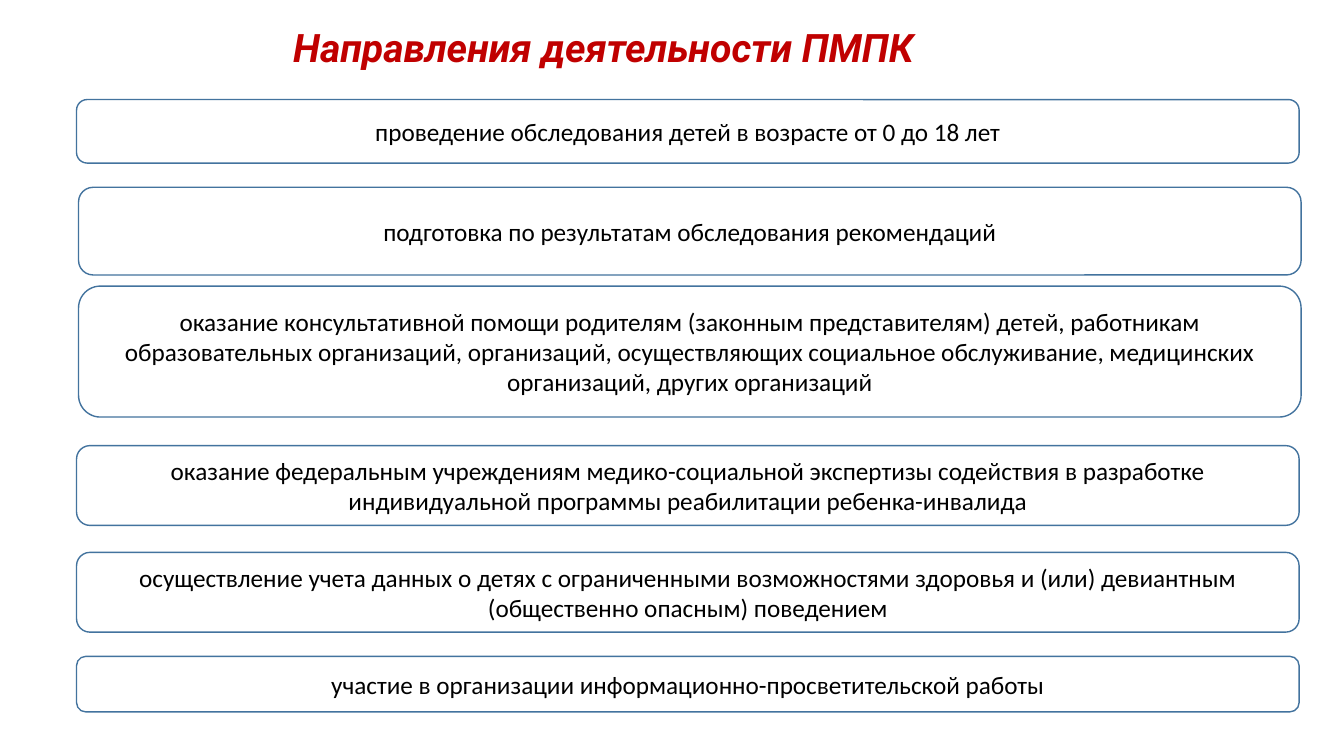
from pptx import Presentation
from pptx.dml.color import RGBColor
from pptx.enum.shapes import MSO_SHAPE
from pptx.enum.text import MSO_ANCHOR, PP_ALIGN
from pptx.util import Cm, Pt

ROUND = MSO_SHAPE.ROUNDED_RECTANGLE
MIDDLE = MSO_ANCHOR.MIDDLE
LEFT, CENTER = PP_ALIGN.LEFT, PP_ALIGN.CENTER

COLORS = {"title": "C00000", "text": "000000", "fill": "FFFFFF", "line": "43739E"}

TITLE = "Направления деятельности ПМПК"
SHIFT = 0.05
TASKS = [
    (0, 0, 1.6, "проведение обследования детей в возрасте от 0 до 18 лет"),
    (SHIFT, 2.21, 2.21, "подготовка по результатам обследования рекомендаций"),
    (SHIFT, 4.7, 3.3,
     "оказание консультативной помощи родителям (законным представителям) детей, "
     "работникам образовательных организаций, организаций, осуществляющих социальное "
     "обслуживание, медицинских организаций, других организаций"),
    (0, 8.72, 2.01,
     "оказание федеральным учреждениям медико-социальной экспертизы содействия "
     "в разработке индивидуальной программы реабилитации ребенка-инвалида"),
    (0, 11.41, 2.01,
     "осуществление учета данных о детях с ограниченными возможностями здоровья "
     "и (или) девиантным (общественно опасным) поведением"),
    (0, 14.03, 1.4, "участие в организации информационно-просветительской работы"),
]


def color(name):
    return RGBColor.from_string(COLORS[name])


def write(shape, text, face, size, tint, align):
    frame = shape.text_frame
    frame.word_wrap = True
    frame.vertical_anchor = MIDDLE
    para = frame.paragraphs[0]
    para.text = text
    para.alignment = align
    para.font.name = face
    para.font.size = Pt(size)
    para.font.color.rgb = color(tint)
    return para


def add_title(slide, left, top, width, height):
    box = slide.shapes.add_textbox(Cm(left), Cm(top), Cm(width), Cm(height))
    para = write(box, TITLE, "Roboto", 28, "title", LEFT)
    para.line_spacing = 0.9
    para.font.bold = True
    para.font.italic = True


def add_tasks(slide, left, top, width):
    for shift, drop, height, text in TASKS:
        card = slide.shapes.add_shape(
            ROUND, Cm(left + shift), Cm(top + drop), Cm(width), Cm(height))
        card.shadow.inherit = False
        card.fill.solid()
        card.fill.fore_color.rgb = color("fill")
        card.line.color.rgb = color("line")
        card.line.width = Pt(1)
        write(card, text, "Calibri", 18, "text", CENTER)


def main():
    deck = Presentation()
    deck.slide_width, deck.slide_height = Cm(33.87), Cm(19.05)
    slide = deck.slides.add_slide(deck.slide_layouts[6])
    add_title(slide, 7.14, 0.56, 23.44, 1.37)
    add_tasks(slide, 1.93, 2.51, 30.81)
    deck.save("out.pptx")


if __name__ == "__main__":
    main()
